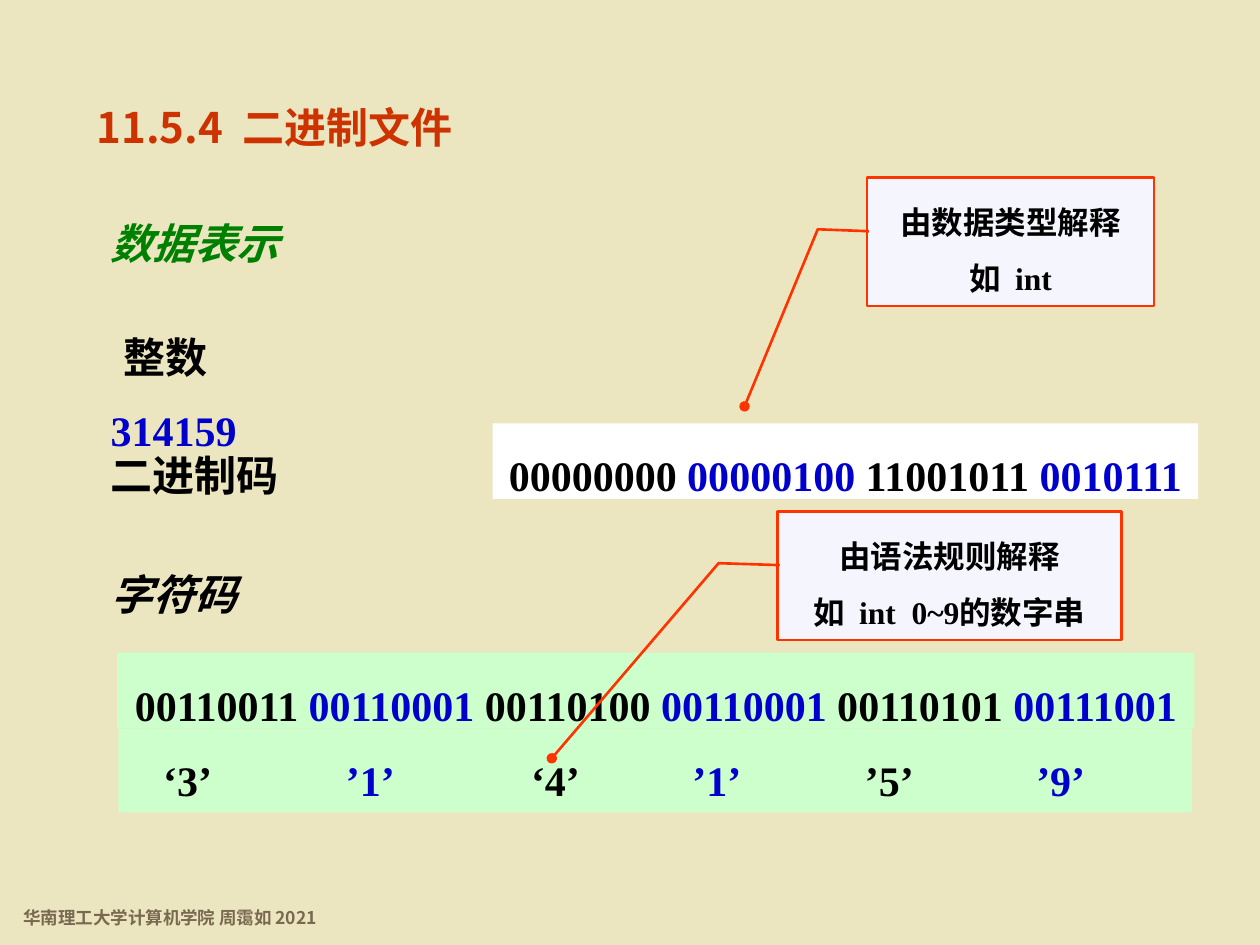
"""Build the slide on how binary files represent an integer."""
import pptx
import pptx.dml.color
import pptx.enum.shapes
import pptx.enum.text
import pptx.oxml
import pptx.oxml.ns
import pptx.util
from dataclasses import dataclass


@dataclass(frozen=True)
class Theme:
    page: str = "ECE6C0"
    heading: str = "CC3300"
    section: str = "008000"
    ink: str = "000000"
    accent: str = "0000CC"
    footer: str = "786950"
    bits: str = "FFFFFF"
    chars: str = "CCFFCC"
    note: str = "F5F6FD"
    note_line: str = "FF3300"
    cjk: str = "Noto Sans CJK SC"
    serif: str = "Times New Roman"
    body: int = 24
    note_size: int = 18
    footer_size: int = 10


THEME = Theme()
WIDTH, HEIGHT = 10, 7.5
LABEL_LEFT, LABEL_WIDTH, LABEL_HEIGHT = 7.8, 24, 8.1

FOOTER = "华南理工大学计算机学院 周霭如 2021"
HEADING = "11.5.4  二进制文件"
LABELS = [
    (20.8, ["数据表示"], dict(color=THEME.section, font=THEME.cjk, italic=True, spacing=1.3)),
    (32.27, ["整数"], dict(indent=0.1)),
    (44.8, ["二进制码"], {}),
    (57.33, ["字符码"], dict(italic=True)),
]
INTEGER = "314159"
INTEGER_TOP = 40.0
INTEGER_BITS = ["00000000", "00000100", "11001011", "0010111"]
CHAR_BITS = ["00110011", "00110001", "00110100", "00110001", "00110101", "00111001"]
CHARS = ["‘3’", "’1’", "‘4’", "’1’", "’5’", "’9’"]
CHAR_CENTERS = [0.45, 1.9, 3.37, 4.65, 6.02, 7.38]
NOTES = [
    ((68.8, 18.8, 22.8, 13.6), (1.78, -0.426), ["由数据类型解释", "如  int"]),
    ((61.7, 54.13, 27.3, 13.6), (1.92, -0.656), ["由语法规则解释", "如  int  0~9的数字串"]),
]


def place(left, top, width, height):
    """Turn percentages of the slide into lengths."""
    shares = ((left, WIDTH), (top, HEIGHT), (width, WIDTH), (height, HEIGHT))
    return [pptx.util.Inches(share * side / 100) for share, side in shares]


def rgb(color):
    return pptx.dml.color.RGBColor.from_string(color)


def write(shape, lines, size=THEME.body, font=THEME.serif, color=THEME.ink, italic=False,
          align="LEFT", anchor="TOP", spacing=1.4, wrap=True, indent=0, centers=()):
    """Fill a shape with lines, each a string or a list of (text, color) pieces."""
    frame = shape.text_frame
    frame.word_wrap = wrap
    frame.vertical_anchor = pptx.enum.text.MSO_ANCHOR[anchor]
    for index, line in enumerate(lines):
        paragraph = frame.add_paragraph() if index else frame.paragraphs[0]
        paragraph.alignment = pptx.enum.text.PP_ALIGN[align]
        paragraph.line_spacing = spacing
        properties = paragraph._p.get_or_add_pPr()
        if indent:
            properties.set("marL", str(pptx.util.Inches(indent)))
        if centers:
            tabs = pptx.oxml.ns.qn("a:tabLst")
            stops = properties.makeelement(tabs, {})
            for center in centers:
                stop = stops.makeelement(pptx.oxml.ns.qn("a:tab"), {})
                stop.set("pos", str(pptx.util.Inches(center)))
                stop.set("algn", "ctr")
                stops.append(stop)
            properties.append(stops)
        for text, piece_color in [(line, color)] if isinstance(line, str) else line:
            run = paragraph.add_run()
            run.text = text
            run.font.name = font
            run.font.size = pptx.util.Pt(size)
            run.font.bold = True
            run.font.italic = italic
            run.font.color.rgb = rgb(piece_color)
            if any(letter >= "一" for letter in text):
                latin = run._r.rPr.find(pptx.oxml.ns.qn("a:latin"))
                east = latin.makeelement(pptx.oxml.ns.qn("a:ea"), {"typeface": THEME.cjk})
                latin.addnext(east)


def add_text(slide, area, lines, **style):
    write(slide.shapes.add_textbox(*place(*area)), lines, **style)


def add_panel(slide, kind, area, fill):
    panel = slide.shapes.add_shape(kind, *place(*area))
    panel.shadow.inherit = False
    panel.fill.solid()
    panel.fill.fore_color.rgb = rgb(fill)
    panel.line.fill.background()
    return panel


def add_strip(slide, area, fill, lines, **style):
    write(add_panel(slide, pptx.enum.shapes.MSO_SHAPE.RECTANGLE, area, fill), lines, **style)


def add_note(slide, area, target, lines):
    note = add_panel(slide, pptx.enum.shapes.MSO_SHAPE.LINE_CALLOUT_2, area, THEME.note)
    for index, value in enumerate((0.417, 0.007, 0.402, -0.171, *target)):
        note.adjustments[index] = value
    note.line.color.rgb = rgb(THEME.note_line)
    note.line.width = pptx.util.Pt(1.5)
    outline = note.line._get_or_add_ln()
    outline.append(outline.makeelement(pptx.oxml.ns.qn("a:tailEnd"), {"type": "oval"}))
    write(note, lines, size=THEME.note_size, align="CENTER", spacing=1.5)


def alternate(items, before="", between=""):
    colors = (THEME.ink, THEME.accent)
    return [((between if index else before) + item, colors[index % 2])
            for index, item in enumerate(items)]


def main():
    deck = pptx.Presentation()
    deck.slide_width, deck.slide_height = pptx.util.Inches(WIDTH), pptx.util.Inches(HEIGHT)
    slide = deck.slides.add_slide(deck.slide_layouts[6])
    slide.background.fill.solid()
    slide.background.fill.fore_color.rgb = rgb(THEME.page)

    add_text(slide, (0.2, 95.33, 26.6, 3.6), [FOOTER], size=THEME.footer_size, font=THEME.cjk,
             color=THEME.footer, align="CENTER", spacing=1.0, wrap=False)
    add_text(slide, (6.7, 8.93, 61.7, 8.93), [HEADING], font=THEME.cjk, color=THEME.heading,
             anchor="MIDDLE", spacing=1.0)
    for top, lines, style in LABELS:
        add_text(slide, (LABEL_LEFT, top, LABEL_WIDTH, LABEL_HEIGHT), lines, **style)
    add_text(slide, (LABEL_LEFT, INTEGER_TOP, LABEL_WIDTH, LABEL_HEIGHT), [INTEGER],
             color=THEME.accent)

    add_strip(slide, (39.1, 44.8, 56, 8), THEME.bits, [alternate(INTEGER_BITS, between=" ")],
              align="CENTER", wrap=False)
    add_strip(slide, (9.3, 69.07, 85.5, 8), THEME.chars, [alternate(CHAR_BITS, between=" ")],
              align="CENTER", wrap=False)
    add_strip(slide, (9.4, 77.07, 85.2, 8.9), THEME.chars,
              [alternate(CHARS, before="\t", between="\t")], centers=CHAR_CENTERS)
    for area, target, lines in NOTES:
        add_note(slide, area, target, lines)
    deck.save("out.pptx")


if __name__ == "__main__":
    main()
